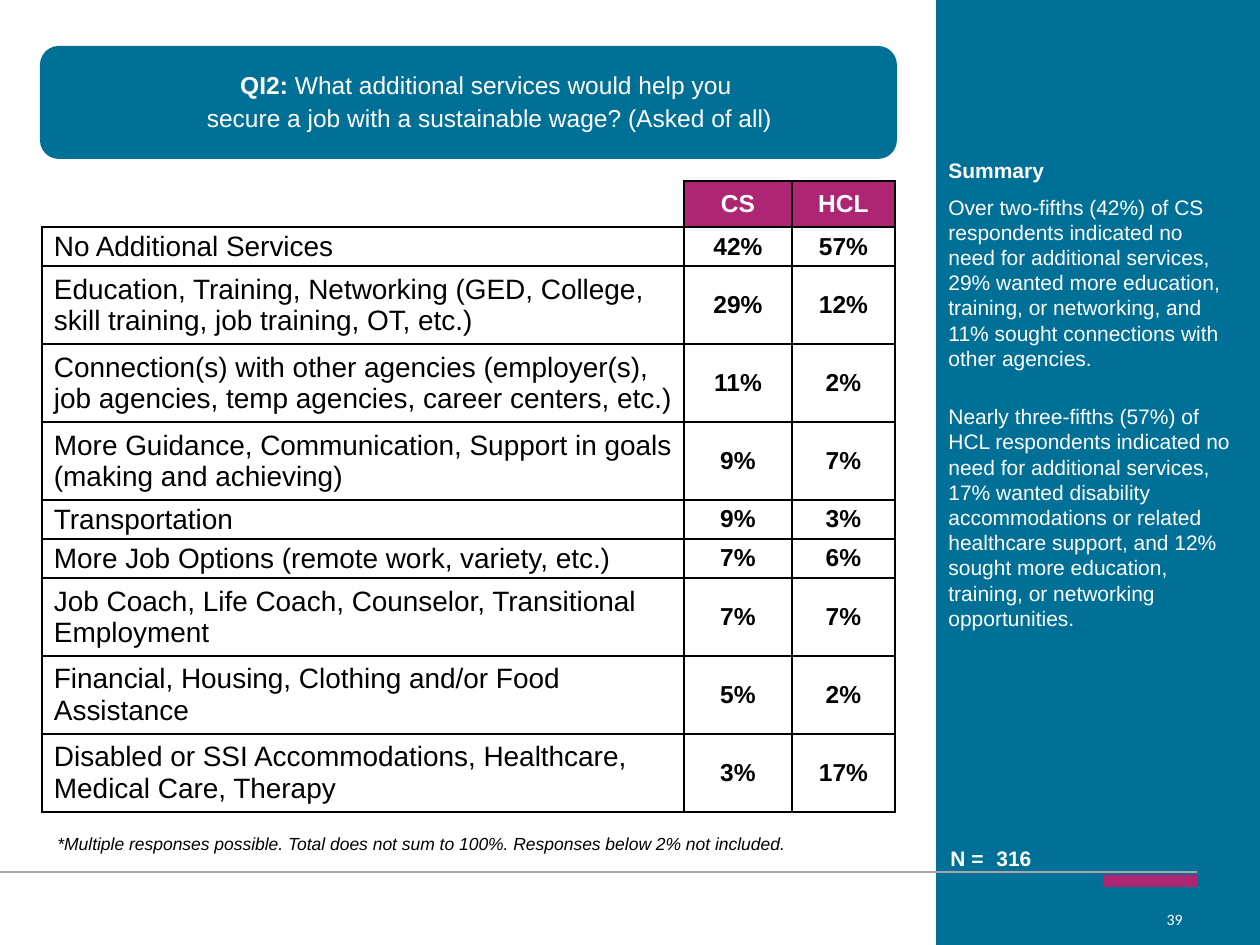
from lxml import etree
from pptx import Presentation
from pptx.dml.color import RGBColor
from pptx.enum.shapes import MSO_CONNECTOR, MSO_SHAPE
from pptx.enum.text import MSO_ANCHOR, PP_ALIGN
from pptx.oxml.ns import qn
from pptx.util import Pt

EMU_PER_PX = 914400 / 126
RECTANGLE, ROUNDED = MSO_SHAPE.RECTANGLE, MSO_SHAPE.ROUNDED_RECTANGLE
STRAIGHT = MSO_CONNECTOR.STRAIGHT
TOP, MIDDLE = MSO_ANCHOR.TOP, MSO_ANCHOR.MIDDLE
LEFT, CENTER, RIGHT = PP_ALIGN.LEFT, PP_ALIGN.CENTER, PP_ALIGN.RIGHT

TEAL = RGBColor(0x00, 0x70, 0x96)
MAGENTA = RGBColor(0xAE, 0x25, 0x73)
GRAY = RGBColor(0xA6, 0xA6, 0xA6)
WHITE = RGBColor(0xFF, 0xFF, 0xFF)
BLACK = RGBColor(0x00, 0x00, 0x00)

PLAIN = {"name": "Arial", "size": Pt(12), "bold": False, "color": WHITE}
BOLD = {**PLAIN, "bold": True}
TITLE = {**PLAIN, "size": Pt(14)}
TITLE_BOLD = {**TITLE, "bold": True}
NOTE = {**PLAIN, "size": Pt(10), "italic": True, "color": BLACK}
PAGE = {**PLAIN, "name": "Calibri", "size": Pt(9)}
ANSWER = {**PLAIN, "size": Pt(16), "color": BLACK}
PERCENT = {**BOLD, "size": Pt(14), "color": BLACK}
HEADER = {**PERCENT, "color": WHITE}

COLUMN_WIDTHS = (642, 108, 103)
HEADER_HEIGHT, LINE_HEIGHT = 46, 39
HEADERS = ("CS", "HCL")
# answer, CS, HCL, lines of text
ANSWERS = (
    ("No Additional Services", 42, 57, 1),
    ("Education, Training, Networking (GED, College, skill training, "
     "job training, OT, etc.)", 29, 12, 2),
    ("Connection(s) with other agencies (employer(s), job agencies, "
     "temp agencies, career centers, etc.)", 11, 2, 2),
    ("More Guidance, Communication, Support in goals (making and achieving)", 9, 7, 2),
    ("Transportation", 9, 3, 1),
    ("More Job Options (remote work, variety, etc.)", 7, 6, 1),
    ("Job Coach, Life Coach, Counselor, Transitional Employment", 7, 7, 2),
    ("Financial, Housing, Clothing and/or Food Assistance", 5, 2, 2),
    ("Disabled or SSI Accommodations, Healthcare, Medical Care, Therapy", 3, 17, 2),
)
SUMMARY = (
    "Over two-fifths (42%) of CS respondents indicated no need for additional "
    "services, 29% wanted more education, training, or networking, and 11% sought "
    "connections with other agencies.",
    "Nearly three-fifths (57%) of HCL respondents indicated no need for additional "
    "services, 17% wanted disability accommodations or related healthcare support, "
    "and 12% sought more education, training, or networking opportunities.",
)


def px(length):
    return round(length * EMU_PER_PX)


def add_block(slide, box, color, preset=RECTANGLE):
    shape = slide.shapes.add_shape(preset, *map(px, box))
    shape.shadow.inherit = False
    shape.fill.solid()
    shape.fill.fore_color.rgb = color
    shape.line.fill.background()


def write_paragraph(paragraph, runs, **layout):
    """Add (text, format) runs and set paragraph attributes."""
    for name, value in layout.items():
        setattr(paragraph, name, value)
    for text, text_format in runs:
        run = paragraph.add_run()
        run.text = text
        for name, value in text_format.items():
            if name == "color":
                run.font.color.rgb = value
            else:
                setattr(run.font, name, value)


def add_text(slide, box, paragraphs, anchor=TOP):
    """Add a text box; each paragraph is a pair of runs and layout."""
    frame = slide.shapes.add_textbox(*map(px, box)).text_frame
    frame.word_wrap = True
    frame.vertical_anchor = anchor
    for index, (runs, layout) in enumerate(paragraphs):
        paragraph = frame.add_paragraph() if index else frame.paragraphs[0]
        write_paragraph(paragraph, runs, **layout)


def set_borders(cell, sides):
    """Draw black borders on the given sides (of L, R, T, B) and clear the others."""
    properties = cell._tc.get_or_add_tcPr()
    for index, side in enumerate("LRTB"):
        line = etree.Element(qn(f"a:ln{side}"), w=str(Pt(1)))
        if side in sides:
            fill = etree.SubElement(line, qn("a:solidFill"))
            etree.SubElement(fill, qn("a:srgbClr"), val=str(BLACK))
        else:
            etree.SubElement(line, qn("a:noFill"))
        properties.insert(index, line)


def style_cell(cell, fill=None, sides="LRTB", margin_left=0):
    cell.vertical_anchor = MIDDLE
    cell.margin_left = px(margin_left)
    cell.margin_top = cell.margin_right = cell.margin_bottom = 0
    if fill is None:
        cell.fill.background()
    else:
        cell.fill.solid()
        cell.fill.fore_color.rgb = fill
    set_borders(cell, sides)


def fill_cell(cell, text, text_format, align=CENTER, **style):
    style_cell(cell, **style)
    write_paragraph(cell.text_frame.paragraphs[0], [(text, text_format)], alignment=align)


def add_title(slide, left, top, width, height):
    add_block(slide, (left, top, width, height), TEAL, ROUNDED)
    layout = {"alignment": CENTER, "space_before": Pt(2)}
    add_text(slide, (left + 64, top + 18, width - 86, height - 22), [
        ([("QI2: ", TITLE_BOLD),
          ("What additional services would help you ", TITLE)], layout),
        ([("secure a job with a sustainable wage? (Asked of all)", TITLE)], layout),
    ])


def add_answers(slide, left, top):
    heights = [HEADER_HEIGHT] + [LINE_HEIGHT * answer[-1] for answer in ANSWERS]
    table = slide.shapes.add_table(
        len(heights), len(COLUMN_WIDTHS), px(left), px(top),
        px(sum(COLUMN_WIDTHS)), px(sum(heights))).table
    table.first_row = table.horz_banding = False
    for column, width in zip(table.columns, COLUMN_WIDTHS):
        column.width = px(width)
    for row, height in zip(table.rows, heights):
        row.height = px(height)

    style_cell(table.cell(0, 0), sides="RB")
    for column, text in enumerate(HEADERS, start=1):
        fill_cell(table.cell(0, column), text, HEADER, fill=MAGENTA)
    for row, (answer, *percents, _) in enumerate(ANSWERS, start=1):
        fill_cell(table.cell(row, 0), answer, ANSWER, LEFT, margin_left=12)
        for column, percent in enumerate(percents, start=1):
            fill_cell(table.cell(row, column), f"{percent}%", PERCENT)


def add_sidebar(slide, left, top, width):
    add_text(slide, (left, top + 151, width, 38), [([("Summary", BOLD)], {})])
    add_text(slide, (left, top + 188, width - 14, 263), [
        ([(text, PLAIN)], {"space_before": Pt(space)})
        for text, space in zip(SUMMARY, (2.4, 19))])
    for offset, box_width, text in ((2, 82, "N ="), (48, 70, "316")):
        add_text(slide, (left + offset, top + 839, box_width, 38), [([(text, BOLD)], {})])


def add_footer(slide, left, top, width):
    rule = slide.shapes.add_connector(
        STRAIGHT, px(left), px(top), px(left + width), px(top))
    rule.line.color.rgb = GRAY
    rule.line.width = Pt(0.75)
    etree.SubElement(rule._element.spPr, qn("a:effectLst"))
    add_block(slide, (left + width - 94, top + 3, 94, 12), MAGENTA)
    add_text(slide, (left + width - 477, top + 28, 475, 38),
             [([("39", PAGE)], {"alignment": RIGHT})], MIDDLE)


def main():
    presentation = Presentation()
    presentation.slide_width, presentation.slide_height = px(1260), px(945)
    slide = presentation.slides.add_slide(presentation.slide_layouts[6])
    add_block(slide, (936, 0, 324, 945), TEAL)
    add_title(slide, 40, 46, 857, 113)
    add_answers(slide, 42, 181)
    add_text(slide, (45, 827, 789, 38), [
        ([("*Multiple responses possible. Total does not sum to 100%. "
           "Responses below 2% not included.", NOTE)], {"space_before": Pt(2)})])
    add_footer(slide, 0, 872, 1197)
    add_sidebar(slide, 936, 0, 324)
    presentation.save("out.pptx")


if __name__ == "__main__":
    main()
